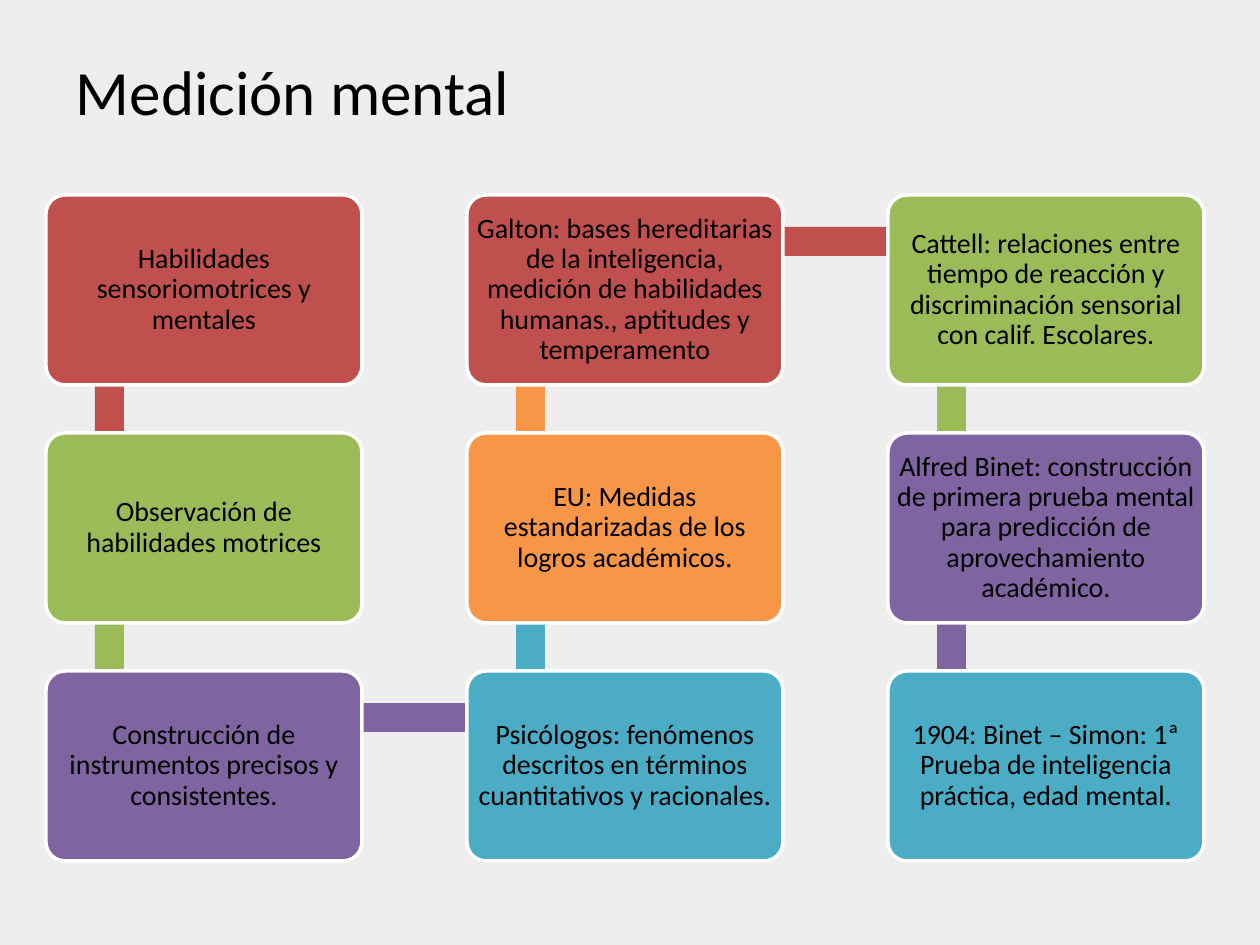
from pptx import Presentation
from pptx.dml.color import RGBColor
from pptx.enum.shapes import MSO_SHAPE
from pptx.enum.text import MSO_ANCHOR, PP_ALIGN
from pptx.util import Pt

PX = 914400 / 126
RECTANGLE = MSO_SHAPE.RECTANGLE
ROUNDED = MSO_SHAPE.ROUNDED_RECTANGLE
LEFT, CENTER = PP_ALIGN.LEFT, PP_ALIGN.CENTER
MIDDLE, BOTTOM = MSO_ANCHOR.MIDDLE, MSO_ANCHOR.BOTTOM

BACKGROUND = RGBColor(0xEE, 0xEE, 0xEE)
BLACK = RGBColor(0x00, 0x00, 0x00)
WHITE = RGBColor(0xFF, 0xFF, 0xFF)
RED = RGBColor(0xC0, 0x50, 0x4D)
GREEN = RGBColor(0x9B, 0xBB, 0x59)
PURPLE = RGBColor(0x80, 0x64, 0xA2)
TEAL = RGBColor(0x4B, 0xAC, 0xC6)
ORANGE = RGBColor(0xF7, 0x96, 0x46)

GRID_LEFT, GRID_TOP = 46, 195
COLUMN_STEP, ROW_STEP = 421, 238
BOX_WIDTH, BOX_HEIGHT = 316, 190
BAR = 29

# Column, row, colour and text, in reading order of the winding path
STEPS = [
    (0, 0, RED, "Habilidades sensoriomotrices y mentales"),
    (0, 1, GREEN, "Observación de habilidades motrices"),
    (0, 2, PURPLE, "Construcción de instrumentos precisos y consistentes."),
    (1, 2, TEAL, "Psicólogos: fenómenos descritos en términos cuantitativos y racionales."),
    (1, 1, ORANGE, "EU: Medidas estandarizadas de los logros académicos."),
    (1, 0, RED, "Galton: bases hereditarias de la inteligencia, medición de "
                "habilidades humanas., aptitudes y temperamento"),
    (2, 0, GREEN, "Cattell: relaciones entre tiempo de reacción y "
                  "discriminación sensorial con calif. Escolares."),
    (2, 1, PURPLE, "Alfred Binet: construcción de primera prueba mental para "
                   "predicción de aprovechamiento académico."),
    (2, 2, TEAL, "1904: Binet – Simon: 1ª Prueba de inteligencia práctica, edad mental."),
]


def add_block(kind, left, top, width, height, color):
    """Add a filled shape without line or shadow, placed in px."""
    block = page.shapes.add_shape(kind, *(round(v * PX) for v in (left, top, width, height)))
    block.shadow.inherit = False
    block.fill.solid()
    block.fill.fore_color.rgb = color
    block.line.fill.background()
    return block


def write(box, text, size=16, align=CENTER, anchor=MIDDLE, inset=(3, 3), spacing=0.9):
    """Fill a box with one paragraph; inset is horizontal and vertical px."""
    frame = box.text_frame
    frame.word_wrap = True
    frame.vertical_anchor = anchor
    frame.margin_left = frame.margin_right = round(inset[0] * PX)
    frame.margin_top = frame.margin_bottom = round(inset[1] * PX)
    para = frame.paragraphs[0]
    para.alignment = align
    para.line_spacing = spacing
    span = para.add_run()
    span.text = text
    span.font.name = "Calibri"
    span.font.size = Pt(size)
    span.font.color.rgb = BLACK


deck = Presentation()
deck.slide_width, deck.slide_height = round(1260 * PX), round(945 * PX)
page = deck.slides.add_slide(deck.slide_layouts[6])
page.background.fill.solid()
page.background.fill.fore_color.rgb = BACKGROUND

for number, (column, row, color, text) in enumerate(STEPS):
    left = GRID_LEFT + column * COLUMN_STEP
    top = GRID_TOP + row * ROW_STEP

    # The bar to the next step lies behind both boxes
    if number + 1 < len(STEPS):
        next_column, next_row = STEPS[number + 1][:2]
        if next_column == column:
            upper = GRID_TOP + min(row, next_row) * ROW_STEP
            # A bar going up takes the colour of the step it leaves
            add_block(RECTANGLE, left + 49, upper + 47, BAR, ROW_STEP, color)
        else:
            add_block(RECTANGLE, left + 64, top + 32, COLUMN_STEP, BAR, color)

    box = add_block(ROUNDED, left, top, BOX_WIDTH, BOX_HEIGHT, color)
    box.adjustments[0] = 0.1
    box.line.color.rgb = WHITE
    box.line.width = Pt(2)
    write(box, text)

title = page.shapes.add_textbox(*(round(v * PX) for v in (63, -24, 1134, 158)))
write(title, "Medición mental", size=36, align=LEFT, anchor=BOTTOM, inset=(13, 6), spacing=1.0)

deck.save("out.pptx")
